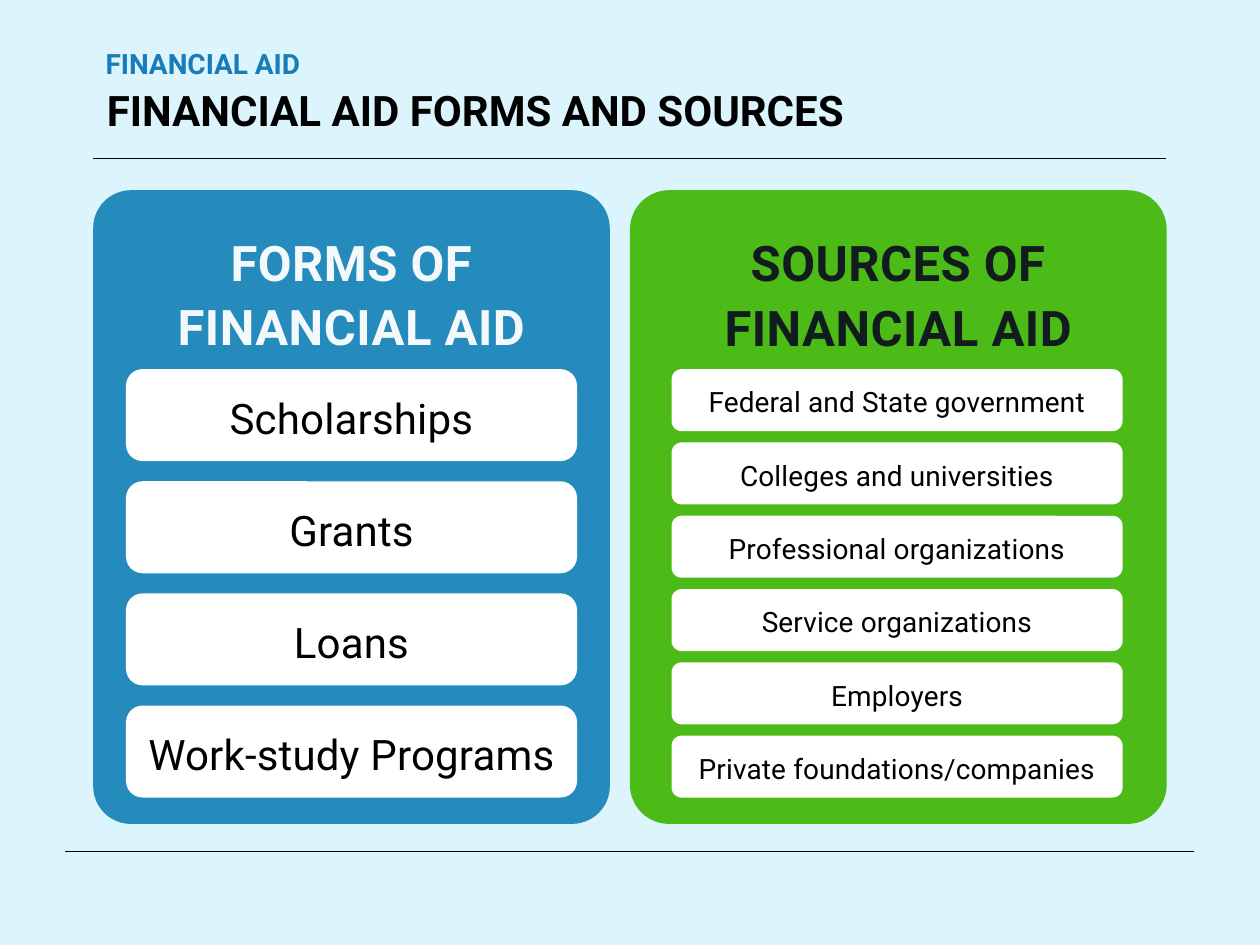
from dataclasses import dataclass

from lxml import etree
from pptx import Presentation
from pptx.dml.color import RGBColor
from pptx.enum import shapes, text
from pptx.oxml import ns
from pptx.util import Inches, Pt


@dataclass(frozen=True)
class Theme:
    font: str = "Roboto"
    background: str = "DCF4FC"
    ink: str = "000000"
    eyebrow: str = "187CB8"
    forms: str = "258ABC"
    forms_heading: str = "F3F9FB"
    sources: str = "4CBB17"
    sources_heading: str = "121B1E"
    card: str = "FFFFFF"
    small: int = 16
    large: int = 24
    heading: int = 28


THEME = Theme()
PANEL_INSETS = (0.25, 0.2, 0.25, 0.25)
NO_INSETS = (0, 0, 0, 0)
TITLE_INSETS = (0.1, 0.05, 0.1, 0.05)


def rgb(value):
    return RGBColor.from_string(value)


def apply(target, formats):
    for name, value in formats.items():
        setattr(target, name, value)


def write(shape, wording, size, color, insets, paragraph_format,
          bold=False, spacing=0, anchor=text.MSO_ANCHOR.TOP):
    frame = shape.text_frame
    left, top, right, bottom = map(Inches, insets)
    apply(frame, {"word_wrap": True, "vertical_anchor": anchor,
                  "margin_left": left, "margin_top": top,
                  "margin_right": right, "margin_bottom": bottom})
    paragraph = frame.paragraphs[0]
    apply(paragraph, paragraph_format)
    run = paragraph.add_run()
    run.text = wording
    apply(run.font, {"name": THEME.font, "size": Pt(size), "bold": bold})
    run.font.color.rgb = rgb(color)
    if spacing:  # hundredths of a point
        run.font._element.set("spc", str(spacing))


def add_rounded(parent, box, color, corner):
    shape = parent.add_shape(shapes.MSO_SHAPE.ROUNDED_RECTANGLE,
                             *map(Inches, box))
    shape.adjustments[0] = corner
    shape.shadow.inherit = False
    shape.fill.solid()
    shape.fill.fore_color.rgb = rgb(color)
    shape.line.fill.background()
    return shape


def add_rule(slide, left, right, y):
    rule = slide.shapes.add_connector(shapes.MSO_CONNECTOR.STRAIGHT,
                                      *map(Inches, (left, y, right, y)))
    rule.line.color.rgb = rgb(THEME.ink)
    rule.line.width = Pt(0.5)
    etree.SubElement(rule._element.spPr, ns.qn("a:effectLst"))


def add_header(slide, box):
    left, top, width, height = box
    lines = (
        ("FINANCIAL AID", left, top, 0.42, THEME.small, THEME.eyebrow),
        ("FINANCIAL AID FORMS AND SOURCES", left + 0.01, top + 0.32, 0.53,
         THEME.large, THEME.ink),
    )
    for wording, x, y, line_height, size, color in lines:
        line = slide.shapes.add_textbox(
            *map(Inches, (x, y, width, line_height)))
        write(line, wording, size, color, TITLE_INSETS,
              {"line_spacing": 0.9}, bold=True)
    add_rule(slide, left, left + width, top + height)


def add_panel(slide, box, heading, colors, items, card_left, gap, size, corner):
    """Heading above a column of equal cards."""
    fill, heading_color = colors
    group = slide.shapes.add_group_shape().shapes
    panel = add_rounded(group, box, fill, 0.073)
    centered = {"alignment": text.PP_ALIGN.CENTER, "line_spacing": 1.1}
    write(panel, heading, THEME.heading, heading_color, PANEL_INSETS,
          centered, bold=True, spacing=30)

    # Cards share the space under the heading
    cards_top, cards_height, card_width = box[1] + 1.42, 3.4, 3.58
    pitch = (cards_height + gap) / len(items)
    for row, item in enumerate(items):
        card_box = (box[0] + card_left, cards_top + row * pitch,
                    card_width, pitch - gap)
        card = add_rounded(group, card_box, THEME.card, corner)
        write(card, item, size, THEME.ink, NO_INSETS,
              {**centered, "space_after": Pt(10)}, spacing=10,
              anchor=text.MSO_ANCHOR.MIDDLE)


def main():
    deck = Presentation()
    deck.slide_width, deck.slide_height = Inches(10), Inches(7.5)
    slide = deck.slides.add_slide(deck.slide_layouts[6])
    slide.background.fill.solid()
    slide.background.fill.fore_color.rgb = rgb(THEME.background)

    # Header and bottom rule
    add_rule(slide, 0.52, 9.48, 6.76)
    add_header(slide, (0.74, 0.35, 8.51, 0.91))

    # Forms of aid
    add_panel(slide, (0.74, 1.51, 4.1, 5.03), "FORMS OF FINANCIAL AID",
              (THEME.forms, THEME.forms_heading),
              ("Scholarships", "Grants", "Loans", "Work-study Programs"),
              card_left=0.26, gap=0.16, size=THEME.large, corner=0.18)

    # Sources of aid
    add_panel(slide, (5, 1.51, 4.26, 5.03), "SOURCES OF FINANCIAL AID",
              (THEME.sources, THEME.sources_heading),
              ("Federal and State government", "Colleges and universities",
               "Professional organizations", "Service organizations",
               "Employers", "Private foundations/companies"),
              card_left=0.33, gap=0.09, size=THEME.small, corner=0.163)

    deck.save("out.pptx")


if __name__ == "__main__":
    main()
